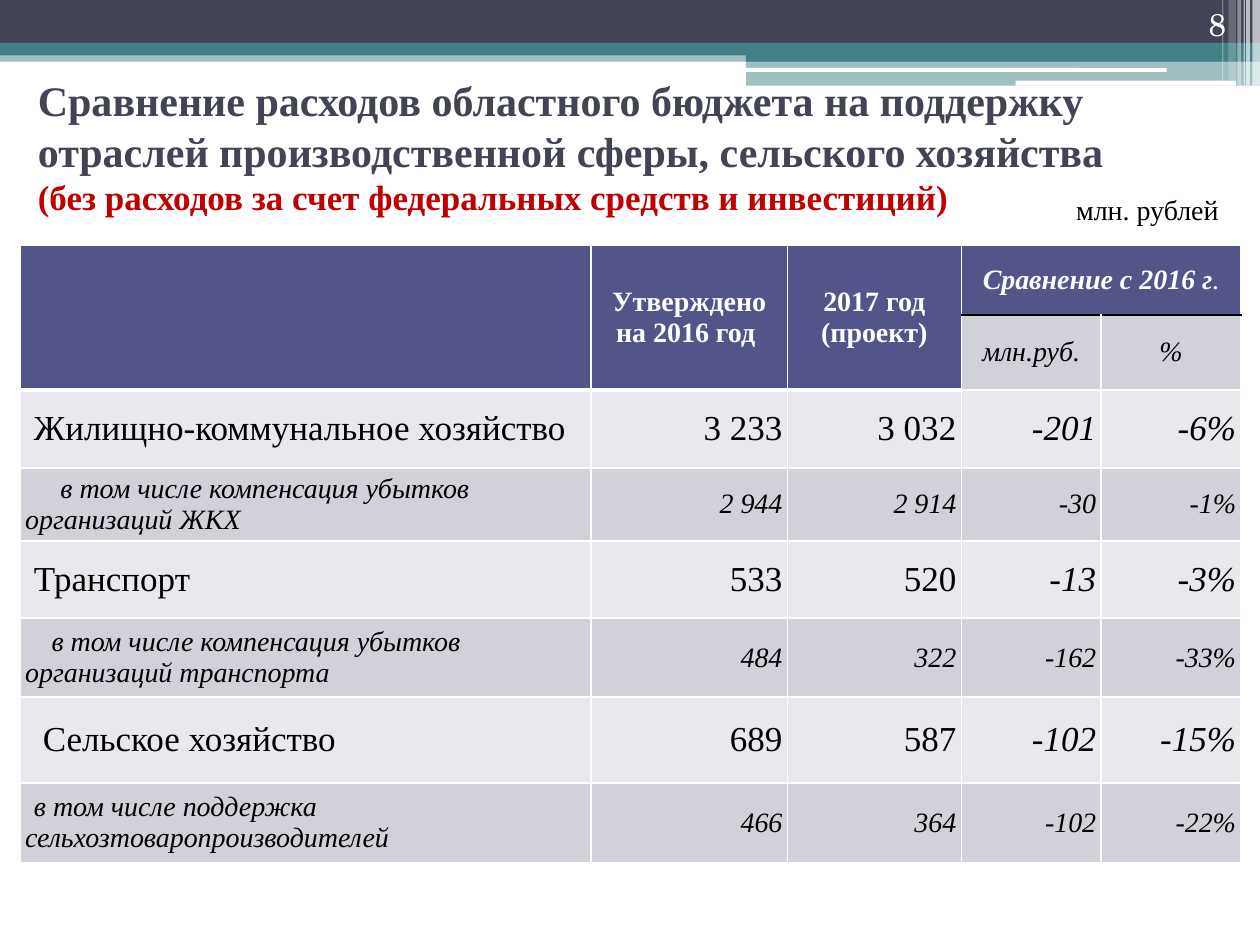
from lxml import etree
from pptx import Presentation
from pptx import util as u
from pptx.dml import color
from pptx.enum import shapes, text
from pptx.oxml import ns

SERIF = "Times New Roman"
WHITE, BLACK, RED = "FFFFFF", "000000", "C00000"
NAVY, TEAL = "424456", "438086"
HEADER, LIGHT, DARK = "53548A", "E9E9ED", "D1D1DA"
LEFT, CENTER, RIGHT = text.PP_ALIGN.LEFT, text.PP_ALIGN.CENTER, text.PP_ALIGN.RIGHT
MIDDLE = text.MSO_ANCHOR.MIDDLE

# left, top, width, height, colour, opacity in percent
BANDS = [
    (0, 0.4, 10, 0.09, TEAL, 50),
    (0, 0, 10, 0.34, NAVY, 100),
    (0, 0.34, 10, 0.1, TEAL, 100),
    (5.92, 0.39, 4.08, 0.1, TEAL, 100),
    (5.92, 0.48, 4.08, 0.2, TEAL, 50),
]
WHITE_BARS = [(5.91, 0.54, 3.35, 0.03), (8.06, 0.64, 1.75, 0.04)]
# left, width, height, opacity in percent
STRIPES = [
    (9.94, 0.06, 0.68, 65), (9.89, 0.03, 0.68, 65), (9.87, 0.01, 0.68, 60),
    (9.82, 0.03, 0.68, 40), (9.75, 0.06, 0.64, 20), (9.7, 0.01, 0.64, 30),
]

COLUMN_WIDTHS = [4.53, 1.56, 1.38, 1.11, 1.11]
ROW_HEIGHTS = [0.55, 0.58, 0.62, 0.58, 0.61, 0.63, 0.68, 0.63]
# first-line indent, label, values; sectors alternate with their details
BUDGET = [
    (0.07, "Жилищно-коммунальное хозяйство", "3 233", "3 032", "-201", "-6%"),
    (0.28, "в том числе компенсация убытков организаций ЖКХ",
     "2 944", "2 914", "-30", "-1%"),
    (0.07, "Транспорт", "533", "520", "-13", "-3%"),
    (0.21, "в том числе компенсация убытков организаций транспорта",
     "484", "322", "-162", "-33%"),
    (0.14, "Сельское хозяйство", "689", "587", "-102", "-15%"),
    (0.07, "в том числе поддержка сельхозтоваропроизводителей",
     "466", "364", "-102", "-22%"),
]


def rgb(value):
    return color.RGBColor.from_string(value)


def add_run(paragraph, words, size, colour, bold=False, italic=False, font=SERIF):
    run = paragraph.add_run()
    run.text = words
    run.font.name, run.font.size = font, u.Pt(size)
    run.font.bold, run.font.italic = bold, italic
    run.font.color.rgb = rgb(colour)


def add_bar(slide, left, top, width, height, colour, opacity=100,
            kind=shapes.MSO_SHAPE.RECTANGLE):
    bar = slide.shapes.add_shape(kind, *map(u.Inches, (left, top, width, height)))
    bar.shadow.inherit = False
    bar.line.fill.background()
    bar.fill.solid()
    bar.fill.fore_color.rgb = rgb(colour)
    if opacity < 100:
        tint = bar.fill._xPr.find(ns.qn("a:solidFill"))[0]
        etree.SubElement(tint, ns.qn("a:alpha"), val=str(opacity * 1000))


def add_label(slide, left, top, width, height, words, size, colour, font, anchor):
    frame = slide.shapes.add_textbox(
        *map(u.Inches, (left, top, width, height))).text_frame
    frame.word_wrap = True
    frame.vertical_anchor = anchor
    frame.paragraphs[0].alignment = RIGHT
    add_run(frame.paragraphs[0], words, size, colour, font=font)


def set_borders(cell, top=(WHITE, 1), bottom=(WHITE, 1)):
    properties = cell._tc.get_or_add_tcPr()
    sides = {"L": (WHITE, 1), "R": (WHITE, 1), "T": top, "B": bottom}
    for place, (side, (colour, width)) in enumerate(sides.items()):
        line = etree.Element(ns.qn(f"a:ln{side}"), w=str(u.Pt(width)))
        fill = etree.SubElement(line, ns.qn("a:solidFill"))
        etree.SubElement(fill, ns.qn("a:srgbClr"), val=colour)
        properties.insert(place, line)


def style_cell(cell, fill, side_inset, edge_inset):
    cell.fill.solid()
    cell.fill.fore_color.rgb = rgb(fill)
    cell.vertical_anchor = MIDDLE
    cell.margin_left = cell.margin_right = u.Inches(side_inset)
    cell.margin_top = cell.margin_bottom = u.Inches(edge_inset)


def fill_header(table):
    headings = {
        (0, 1): ["Утверждено на 2016 год "],
        (0, 2): ["2017 год", "(проект)"],
        (1, 3): ["млн.руб."],
        (1, 4): ["%"],
    }
    for row in range(2):
        for column in range(5):
            cell = table.cell(row, column)
            compared = column > 2
            sub = compared and row == 1
            style_cell(cell, DARK if sub else HEADER, 0.1, 0.05)
            if compared:
                edge = {"top": (BLACK, 1)} if sub else {"bottom": (BLACK, 1)}
            else:
                edge = {"bottom": (WHITE, 3)}
            set_borders(cell, **edge)
            for number, words in enumerate(headings.get((row, column), [])):
                frame = cell.text_frame
                paragraph = frame.add_paragraph() if number else frame.paragraphs[0]
                paragraph.alignment = CENTER
                add_run(paragraph, words, 16, BLACK if sub else WHITE, not sub, sub)
    comparison = table.cell(0, 3).text_frame.paragraphs[0]
    comparison.alignment = CENTER
    add_run(comparison, "Сравнение с 2016 г", 16, WHITE, True, True)
    add_run(comparison, ".", 16, WHITE, False, True)
    for column in range(3):
        table.cell(0, column).merge(table.cell(1, column))
    table.cell(0, 3).merge(table.cell(0, 4))


def fill_budget(table):
    for row, (indent, *entries) in enumerate(BUDGET, start=2):
        detail = row % 2 == 1
        for column, words in enumerate(entries):
            cell = table.cell(row, column)
            style_cell(cell, DARK if detail else LIGHT, 0.04, 0.04)
            top = (WHITE, 3) if row == 2 and column < 3 else (WHITE, 1)
            set_borders(cell, top=top)
            paragraph = cell.text_frame.paragraphs[0]
            paragraph.alignment = RIGHT if column else LEFT
            if column == 0:
                paragraph._p.get_or_add_pPr().set("indent", str(u.Inches(indent)))
            add_run(paragraph, words, 16 if detail else 20, BLACK,
                    italic=detail or column > 2)


def add_budget_table(slide):
    table = slide.shapes.add_table(
        len(ROW_HEIGHTS), len(COLUMN_WIDTHS), u.Inches(0.16), u.Inches(1.95),
        u.Inches(sum(COLUMN_WIDTHS)), u.Inches(sum(ROW_HEIGHTS))).table
    for column, width in zip(table.columns, COLUMN_WIDTHS):
        column.width = u.Inches(width)
    for row, height in zip(table.rows, ROW_HEIGHTS):
        row.height = u.Inches(height)
    fill_header(table)
    fill_budget(table)


def set_title(slide):
    title = slide.shapes.title
    title.left, title.top = u.Inches(0.2), u.Inches(0.68)
    title.width, title.height = u.Inches(8.87), u.Inches(0.96)
    frame = title.text_frame
    frame.auto_size = text.MSO_AUTO_SIZE.NONE
    frame.vertical_anchor = MIDDLE
    heading = frame.paragraphs[0]
    heading.alignment = LEFT
    add_run(heading, "Сравнение расходов областного бюджета на поддержку отраслей "
            "производственной сферы, сельского хозяйства ", 24, NAVY, True)
    add_run(heading, "(без расходов за счет федеральных средств и инвестиций)",
            20, RED, True)


def main():
    deck = Presentation()
    deck.slide_width, deck.slide_height = u.Inches(10), u.Inches(7.5)
    slide = deck.slides.add_slide(deck.slide_layouts[5])

    # Decorated top edge
    for band in BANDS:
        add_bar(slide, *band)
    for bar in WHITE_BARS:
        add_bar(slide, *bar, WHITE, kind=shapes.MSO_SHAPE.ROUNDED_RECTANGLE)
    for left, width, height, opacity in STRIPES:
        add_bar(slide, left, 0, width, height, WHITE, opacity)

    # Content
    add_budget_table(slide)
    add_label(slide, 7.5, 0, 2.33, 0.39, "8", 18, WHITE, "TeX Gyre Schola",
              text.MSO_ANCHOR.BOTTOM)
    set_title(slide)
    add_label(slide, 8.05, 1.48, 1.72, 0.37, "млн. рублей", 16, BLACK, SERIF,
              text.MSO_ANCHOR.TOP)
    deck.save("out.pptx")


if __name__ == "__main__":
    main()
